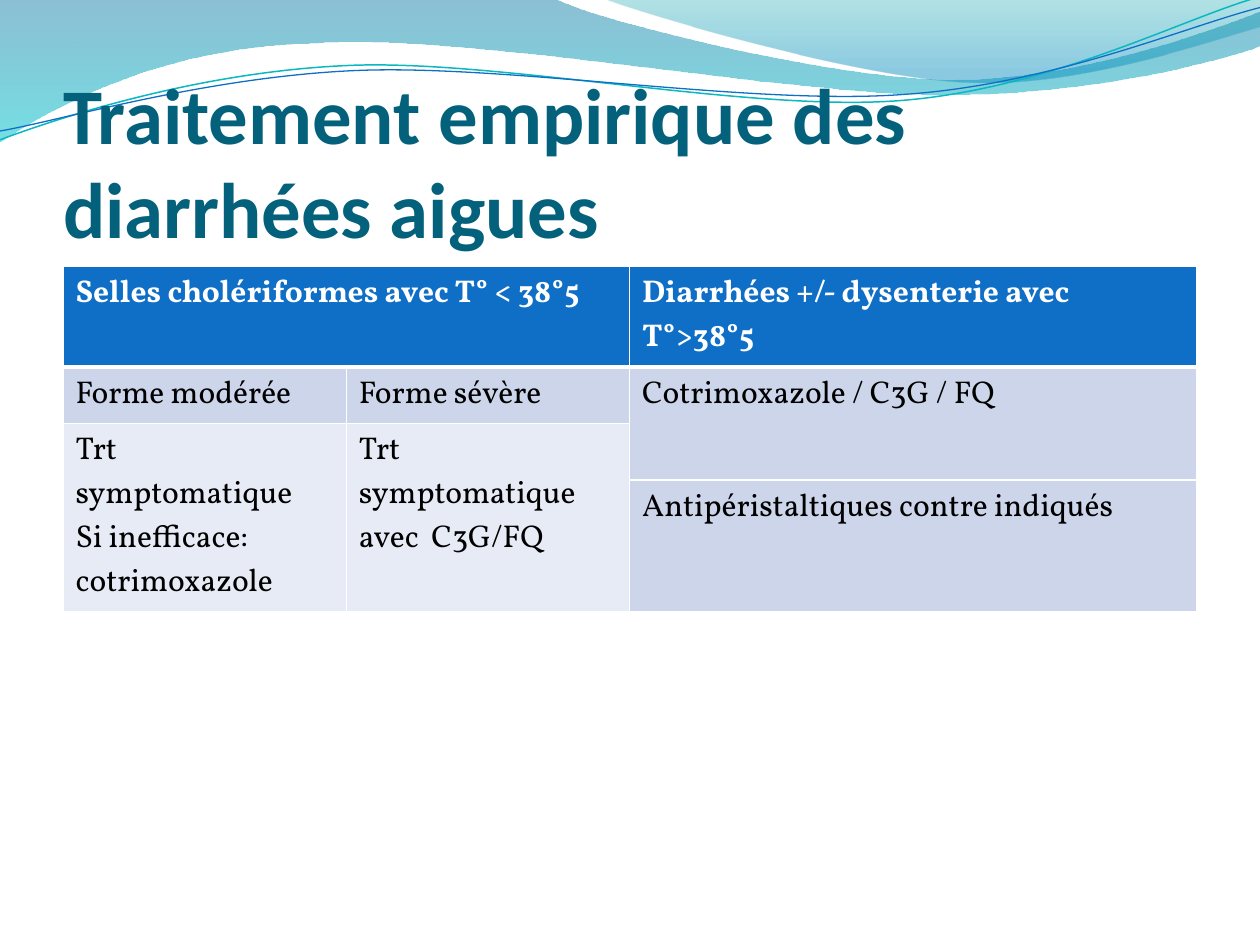
from dataclasses import dataclass

import pptx
import pptx.dml.color
import pptx.enum.text
import pptx.oxml
import pptx.oxml.ns
import pptx.util
from pptx.util import Cm


@dataclass(frozen=True)
class Theme:
    title_font: str = "Calibri"
    body_font: str = "Vollkorn"
    title_size: float = 45
    body_size: float = 18
    title: str = "04617B"
    header: str = "0F6FC6"
    band_dark: str = "CCD5EA"
    band_light: str = "E7EBF5"
    white: str = "FFFFFF"
    black: str = "000000"
    teal_line: str = "0AB8BF"
    wide_wave: tuple = ((0, "0074A1", 45), (1, "00C6CF", 55))
    right_wave: tuple = ((0, "00A1A9", 30), (0.8, "008BBF", 45))


@dataclass(frozen=True)
class Box:
    left: int
    top: int
    width: int
    height: int


THEME = Theme()

WIDE_WAVE = [
    (0, 0), (4.4, -0.01),
    (4.76, 0.17, 6.64, 0.63, 7.58, 0.63), (8.53, 0.63, 9.58, 0.26, 10, 0.09),
    (10.01, 0.36),
    (9.83, 0.44, 8.7, 0.76, 7.46, 0.75), (6.22, 0.75, 3.82, 0.28, 2.57, 0.34),
    (1.29, 0.36, 0.46, 0.83, -0.01, 1.13), (0, 0),
]
RIGHT_WAVE = [
    (4.79, -0.01),
    (5.09, 0.11, 6.82, 0.62, 7.69, 0.65), (8.56, 0.69, 9.61, 0.32, 10, 0.21),
    (10, 0), (4.79, -0.01),
]
TEAL_CURVE = [
    (0, 1.11),
    (0.48, 0.93, 1.58, 0.57, 2.77, 0.52), (3.95, 0.47, 5.93, 0.89, 7.13, 0.8),
    (8.33, 0.71, 9.38, 0.15, 9.98, -0.02),
]
BLUE_CURVE = [
    (0, 1.04),
    (0.47, 0.96, 1.64, 0.61, 2.83, 0.56), (4.03, 0.51, 5.97, 0.84, 7.17, 0.75),
    (8.36, 0.67, 9.41, 0.21, 10, 0.06),
]

COLUMN_WIDTHS = [5.71, 5.71, 11.43]
ROW_HEIGHTS = [1.04, 0.51, 1.14, 2.16]
TREATMENTS = [
    (0, 0, 0, 1, THEME.header, ["Selles cholériformes avec T° < 38°5"]),
    (0, 2, 0, 2, THEME.header, ["Diarrhées +/- dysenterie avec T°>38°5"]),
    (1, 0, 1, 0, THEME.band_dark, ["Forme modérée"]),
    (1, 1, 1, 1, THEME.band_dark, ["Forme sévère"]),
    (1, 2, 2, 2, THEME.band_dark, ["Cotrimoxazole / C3G / FQ"]),
    (2, 0, 3, 0, THEME.band_light, ["Trt symptomatique", "Si inefficace: cotrimoxazole"]),
    (2, 1, 3, 1, THEME.band_light, ["Trt symptomatique avec  C3G/FQ"]),
    (3, 2, 3, 2, THEME.band_dark, ["Antipéristaltiques contre indiqués"]),
]


def rgb(value):
    return pptx.dml.color.RGBColor.from_string(value)


def drawing_xml(tag, attributes="", content=""):
    return pptx.oxml.parse_xml(
        f'<a:{tag} {pptx.oxml.ns.nsdecls("a")} {attributes}>{content}</a:{tag}>')


def set_font(paragraph, name, size, color, bold):
    paragraph.font.name = name
    paragraph.font.size = pptx.util.Pt(size)
    paragraph.font.color.rgb = rgb(color)
    paragraph.font.bold = bold


def bend(outline, segments):
    lines = iter(outline.element.spPr.findall(".//" + pptx.oxml.ns.qn("a:lnTo")))
    for segment in segments[1:]:
        first = next(lines)
        if len(segment) == 2:
            continue
        curve = drawing_xml("cubicBezTo")
        first.addprevious(curve)
        for line in (first, next(lines), next(lines)):
            curve.append(line[0])
            line.getparent().remove(line)


def add_outline(slide, box, segments, close):
    unit = box.width / 10
    points = [(round(box.left + segment[i] * unit), round(box.top + segment[i + 1] * unit))
              for segment in segments for i in range(0, len(segment), 2)]
    builder = slide.shapes.build_freeform(*points[0], scale=1.0)
    builder.add_line_segments(points[1:], close=close)
    outline = builder.convert_to_shape()
    bend(outline, segments)
    outline.shadow.inherit = False
    return outline


def add_waves(slide, box):
    for segments, stops in ((WIDE_WAVE, THEME.wide_wave), (RIGHT_WAVE, THEME.right_wave)):
        wave = add_outline(slide, box, segments, True)
        wave.line.fill.background()
        wave.fill.gradient()
        wave.fill.gradient_angle = 270
        for stop, (position, color, _) in zip(wave.fill.gradient_stops, stops):
            stop.position = position
            stop.color.rgb = rgb(color)
        color_elements = wave.element.spPr.findall(".//" + pptx.oxml.ns.qn("a:srgbClr"))
        for element, (_, _, opacity) in zip(color_elements, stops):
            element.append(drawing_xml("alpha", f'val="{opacity * 1000}"'))
    for segments, color, width in ((TEAL_CURVE, THEME.teal_line, 0.85),
                                   (BLUE_CURVE, THEME.header, 0.75)):
        curve = add_outline(slide, box, segments, False)
        curve.fill.background()
        curve.line.color.rgb = rgb(color)
        curve.line.width = pptx.util.Pt(width)


def place_title(slide, box):
    title = slide.shapes.title
    title.left, title.top, title.width, title.height = box.left, box.top, box.width, box.height
    frame = title.text_frame
    frame.text = "Traitement empirique des diarrhées aigues"
    frame.word_wrap = True
    frame.auto_size = pptx.enum.text.MSO_AUTO_SIZE.NONE
    frame.vertical_anchor = pptx.enum.text.MSO_ANCHOR.BOTTOM
    frame.margin_left = frame.margin_right = frame.margin_bottom = 0
    frame.margin_top = Cm(0.13)
    heading = frame.paragraphs[0]
    heading.alignment = pptx.enum.text.PP_ALIGN.LEFT
    set_font(heading, THEME.title_font, THEME.title_size, THEME.title, True)


def set_borders(cell, row):
    widths = {"L": 1, "R": 1, "T": 3 if row == 1 else 1, "B": 3 if row == 0 else 1}
    for side, width in widths.items():
        cell._tc.get_or_add_tcPr().append(drawing_xml(
            f"ln{side}", f'w="{pptx.util.Pt(width)}"',
            f'<a:solidFill><a:srgbClr val="{THEME.white}"/></a:solidFill>'))


def add_treatments(slide, box):
    table = slide.shapes.add_table(len(ROW_HEIGHTS), len(COLUMN_WIDTHS), box.left,
                                   box.top, box.width, box.height).table
    table.first_row = table.horz_banding = False
    for column, width in zip(table.columns, COLUMN_WIDTHS):
        column.width = Cm(width)
    for row, height in zip(table.rows, ROW_HEIGHTS):
        row.height = Cm(height)
    for top, left, bottom, right, fill, lines in TREATMENTS:
        origin = table.cell(top, left)
        if (top, left) != (bottom, right):
            origin.merge(table.cell(bottom, right))
        origin.text_frame.text = "\n".join(lines)
        is_header = top == 0
        color = THEME.white if is_header else THEME.black
        for paragraph in origin.text_frame.paragraphs:
            set_font(paragraph, THEME.body_font, THEME.body_size, color, is_header)
        for row in range(top, bottom + 1):
            for column in range(left, right + 1):
                cell = table.cell(row, column)
                set_borders(cell, row)
                cell.fill.solid()
                cell.fill.fore_color.rgb = rgb(fill)


def main():
    presentation = pptx.Presentation()
    presentation.slide_width = Cm(25.4)
    presentation.slide_height = Cm(19.05)
    slide = presentation.slides.add_slide(presentation.slide_layouts[5])
    add_waves(slide, Box(0, 0, Cm(25.4), Cm(2.87)))
    title = slide.shapes.title.element
    title.getparent().append(title)
    place_title(slide, Box(Cm(1.27), Cm(1.95), Cm(22.86), Cm(3.18)))
    add_treatments(slide, Box(Cm(1.27), Cm(5.37), Cm(22.86), Cm(4.85)))
    presentation.save("out.pptx")


if __name__ == "__main__":
    main()
